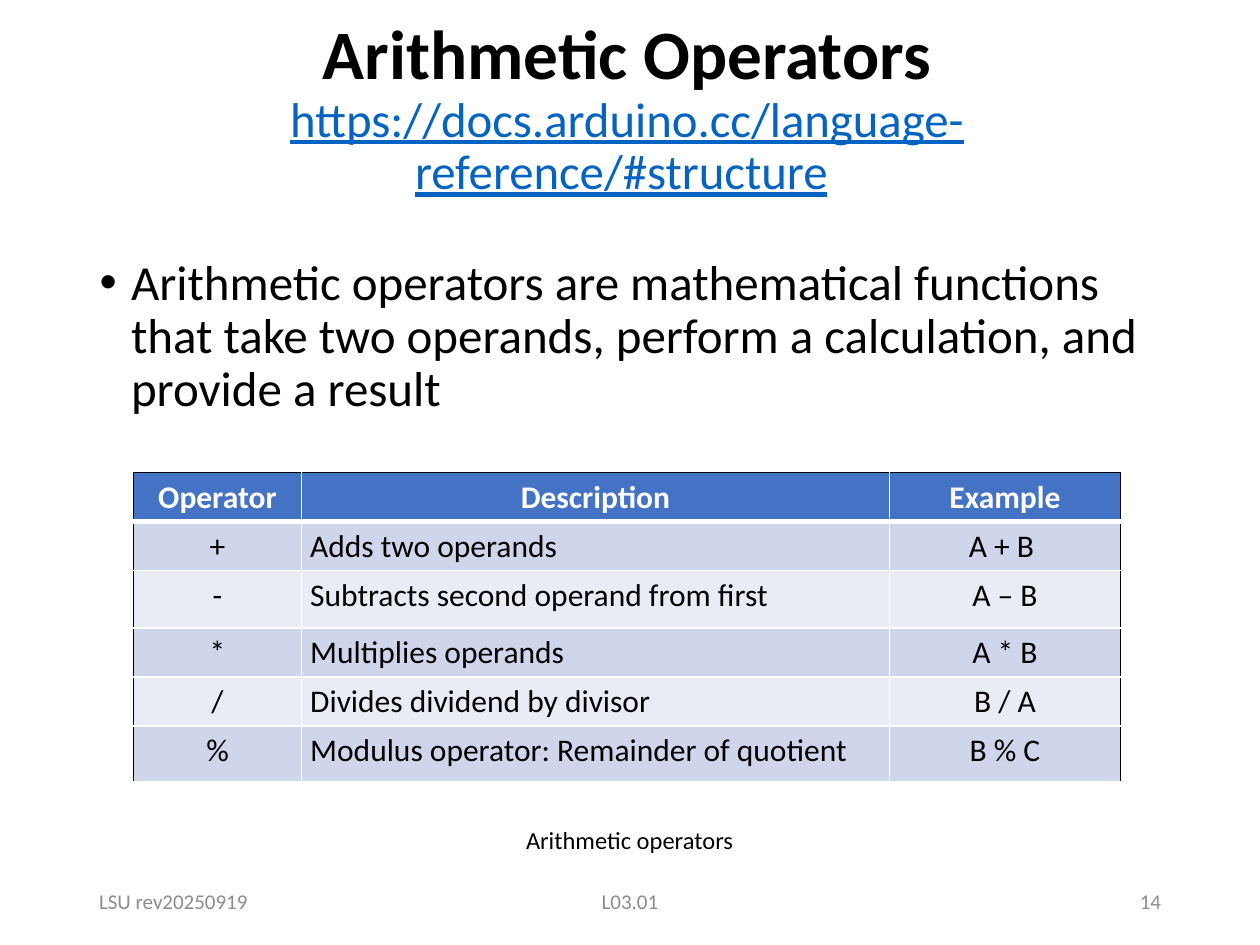
from lxml.etree import SubElement
from pptx import Presentation
from pptx.dml.color import RGBColor
from pptx.enum.text import MSO_ANCHOR as Anchor, MSO_AUTO_SIZE as AutoSize, PP_ALIGN as Align
from pptx.oxml.ns import qn
from pptx.util import Pt

BLACK, WHITE, GREY, LINK = "000000", "FFFFFF", "8C8C8C", "0563C1"
HEADER_FILL, BAND_FILLS = "4472C4", ("CFD5EA", "E9EBF5")
ROWS = [
    ("Operator", "Description", "Example"),
    ("+", "Adds two operands", "A + B "),
    ("-", "Subtracts second operand from first", "A – B"),
    ("*", "Multiplies operands", "A * B"),
    ("/", "Divides dividend by divisor", "B / A"),
    ("%", "Modulus operator: Remainder of quotient", "B % C"),
]
COLUMN_WIDTHS = (96, 336, 132)
ROW_HEIGHTS = (28, 28, 33, 28, 28, 32)


def color(value):
    return RGBColor.from_string(value)


def write(para, text, size=18, fill=BLACK, bold=False, underline=False, align=None, spacing=None):
    """Append a formatted span to a paragraph."""
    if align is not None:
        para.alignment = align
    if spacing is not None:
        para.line_spacing = spacing
    span = para.add_run()
    span.text = text
    font = span.font
    font.name, font.size, font.bold, font.underline = "Calibri", Pt(size), bold, underline
    font.color.rgb = color(fill)


def set_border(cell, side, fill, width):
    line = SubElement(cell._tc.get_or_add_tcPr(), qn(f"a:ln{side}"), w=str(Pt(width)))
    SubElement(SubElement(line, qn("a:solidFill")), qn("a:srgbClr"), val=fill)


class SlideBuilder:
    def __init__(self, deck):
        self.page = deck.slides.add_slide(deck.slide_layouts[1])

    def placeholder(self, index, left, top, width, height, anchor):
        """Move a template placeholder and return its first paragraph."""
        box = self.page.placeholders[index]
        box.left, box.top, box.width, box.height = map(Pt, (left, top, width, height))
        frame = box.text_frame
        frame.word_wrap, frame.auto_size = True, AutoSize.NONE
        frame.vertical_anchor = anchor
        para = frame.paragraphs[0]
        para.space_before = Pt(0)
        return para

    def title(self, text, link):
        para = self.placeholder(0, 126.7, 10.8, 463, 104.4, Anchor.MIDDLE)
        write(para, text, size=39.6, bold=True, align=Align.CENTER, spacing=0.9)
        para.add_line_break()
        write(para, link, size=27.9, fill=LINK, underline=True)
        write(para, " ", size=27.9)

    def bullet(self, text):
        para = self.placeholder(1, 49.7, 144, 620.6, 162.7, Anchor.TOP)
        properties = para._p.get_or_add_pPr()
        properties.set("marL", str(Pt(18)))
        properties.set("indent", str(Pt(-18)))
        write(para, text, size=28, spacing=0.9)
        SubElement(properties, qn("a:buFont"), typeface="Arial")
        SubElement(properties, qn("a:buChar"), char="•")

    def text(self, text, left, top, width, height, anchor=Anchor.TOP, **style):
        frame = self.page.shapes.add_textbox(*map(Pt, (left, top, width, height))).text_frame
        frame.word_wrap = True
        frame.vertical_anchor = anchor
        write(frame.paragraphs[0], text, **style)

    def table(self, left, top):
        size = (sum(COLUMN_WIDTHS), sum(ROW_HEIGHTS))
        frame = self.page.shapes.add_table(len(ROWS), len(COLUMN_WIDTHS), *map(Pt, (left, top, *size)))
        table = frame.table
        for column, width in zip(table.columns, COLUMN_WIDTHS):
            column.width = Pt(width)
        for row, height in zip(table.rows, ROW_HEIGHTS):
            row.height = Pt(height)
        for row, texts in enumerate(ROWS):
            for column, text in enumerate(texts):
                self.cell(table.cell(row, column), row, column, text)

    def cell(self, cell, row, column, text):
        header = row == 0
        cell.margin_left = cell.margin_right = Pt(5)
        cell.margin_top = cell.margin_bottom = Pt(0)
        set_border(cell, "L", BLACK if column == 0 else WHITE, 1)
        set_border(cell, "R", BLACK if column == len(COLUMN_WIDTHS) - 1 else WHITE, 1)
        set_border(cell, "T", BLACK if header else WHITE, 3 if row == 1 else 1)
        set_border(cell, "B", WHITE, 3 if header else 1)
        cell.fill.solid()
        cell.fill.fore_color.rgb = color(HEADER_FILL if header else BAND_FILLS[(row - 1) % 2])
        write(cell.text_frame.paragraphs[0], text, fill=WHITE if header else BLACK, bold=header,
              align=Align.LEFT if column == 1 and not header else Align.CENTER, spacing=1.15)


def main():
    deck = Presentation()
    deck.slide_width, deck.slide_height = Pt(720), Pt(540)
    slide = SlideBuilder(deck)
    slide.title("Arithmetic Operators", "https://docs.arduino.cc/language-reference/#structure")
    slide.bullet("Arithmetic operators are mathematical functions that take two operands, "
                 "perform a calculation, and provide a result")
    for text, left, width, align in (
        ("LSU rev20250919", 49.5, 162, Align.LEFT),
        ("L03.01", 238.5, 243, Align.CENTER),
        ("14", 508.5, 162, Align.RIGHT),
    ):
        slide.text(text, left, 500.5, width, 28.75, Anchor.MIDDLE, size=12, fill=GREY, align=align)
    slide.text("Arithmetic operators", 77.8, 468, 564, 24.5, size=14, align=Align.CENTER)
    slide.table(76.3, 270)
    deck.save("out.pptx")


if __name__ == "__main__":
    main()
